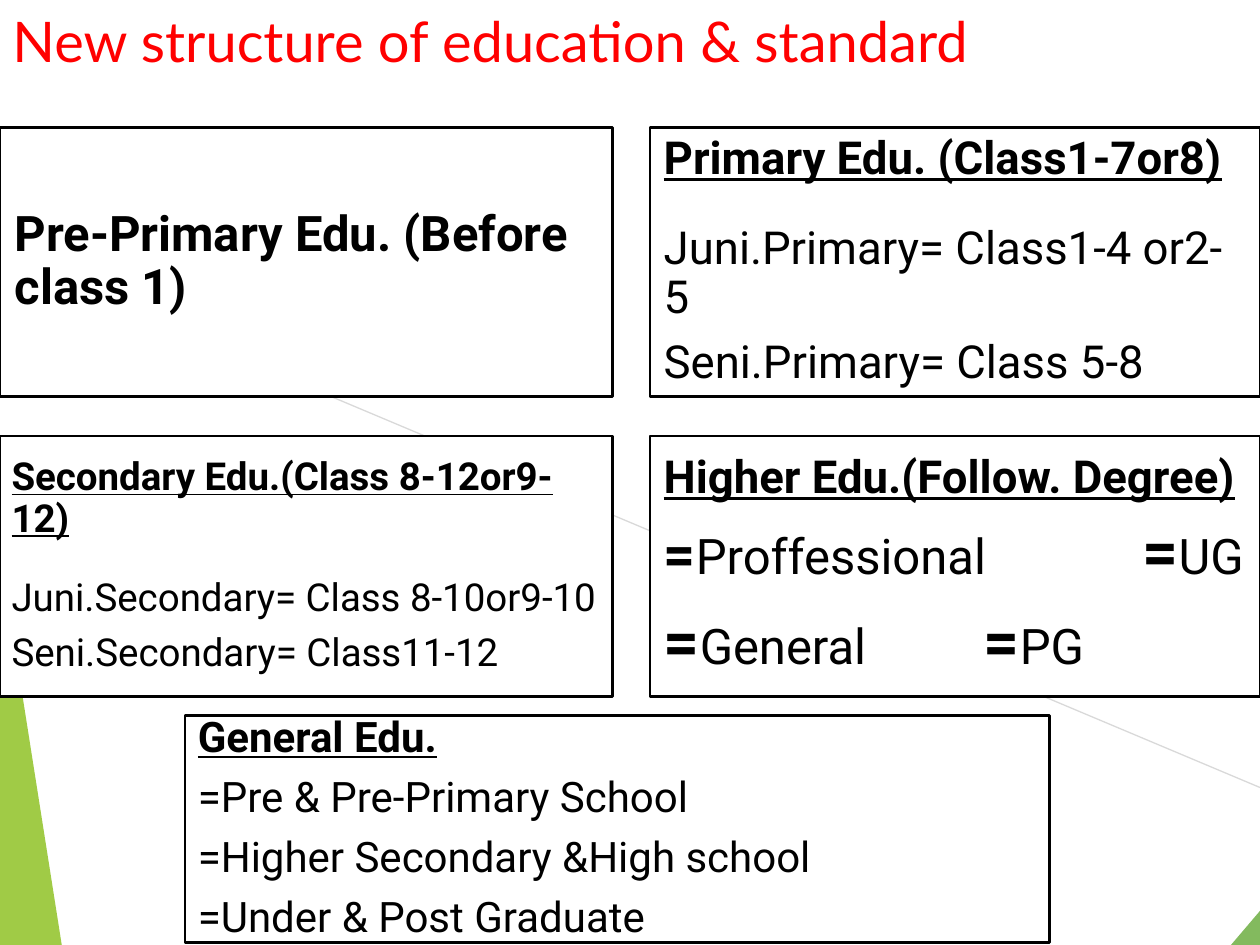
from dataclasses import dataclass

from lxml import etree
from pptx import Presentation
from pptx import util as u
from pptx.dml.color import RGBColor
from pptx.enum import shapes, text
from pptx.oxml import ns


@dataclass(frozen=True)
class Theme:
    title_font: str = "Lato"
    body_font: str = "Roboto"
    title_color: str = "FF0000"
    ink: str = "000000"
    paper: str = "FFFFFF"
    hairline: str = "D9D9D9"
    green: str = "54A021"
    lime: str = "90C226"
    title_size: int = 32
    small: int = 22
    normal: int = 24
    large: int = 26
    huge: int = 28
    first_sign: int = 32
    sign: int = 36
    line_spacing: float = 0.9
    space_after: float = 0.35


class SlideBuilder:
    """Places elements on a grid of 100 columns by 75 rows."""

    COLUMNS, ROWS = 100, 75

    def __init__(self, presentation, theme):
        self.theme = theme
        self.column = presentation.slide_width / self.COLUMNS
        self.row = presentation.slide_height / self.ROWS
        self.slide = presentation.slides.add_slide(presentation.slide_layouts[6])

    def area(self, left, top, width, height):
        return (u.Emu(round(left * self.column)), u.Emu(round(top * self.row)),
                u.Emu(round(width * self.column)), u.Emu(round(height * self.row)))

    def style(self, run, font, size, color, bold=False, underline=False):
        run.font.name = font
        run.font.size = u.Pt(size)
        run.font.color.rgb = RGBColor.from_string(color)
        run.font.bold = bold
        run.font.underline = underline

    def title(self, wording, *place):
        box = self.slide.shapes.add_textbox(*self.area(*place))
        box.text_frame.word_wrap = True
        box.text_frame.text = wording
        self.style(box.text_frame.paragraphs[0].runs[0], self.theme.title_font,
                   self.theme.title_size, self.theme.title_color)

    def triangle(self, place, apex, color, opacity):
        shape = self.slide.shapes.add_shape(
            shapes.MSO_SHAPE.ISOSCELES_TRIANGLE, *self.area(*place))
        shape.shadow.inherit = False
        shape.adjustments[0] = apex
        shape.fill.solid()
        shape.fill.fore_color.rgb = RGBColor.from_string(color)
        shape.line.fill.background()
        color_node = next(shape.element.spPr.iter(ns.qn("a:srgbClr")))
        etree.SubElement(color_node, ns.qn("a:alpha"), val=str(opacity * 1000))

    def line(self, start, end):
        connector = self.slide.shapes.add_connector(
            shapes.MSO_CONNECTOR.STRAIGHT, *self.area(*start, *end))
        connector.line.color.rgb = RGBColor.from_string(self.theme.hairline)
        connector.line.width = u.Pt(0.75)
        etree.SubElement(connector.element.spPr, ns.qn("a:effectLst"))

    def card(self, place, size):
        """Adds an outlined box and returns its text frame."""
        shape = self.slide.shapes.add_shape(
            shapes.MSO_SHAPE.RECTANGLE, *self.area(*place))
        shape.shadow.inherit = False
        shape.fill.solid()
        shape.fill.fore_color.rgb = RGBColor.from_string(self.theme.paper)
        shape.line.color.rgb = RGBColor.from_string(self.theme.ink)
        shape.line.width = u.Pt(1.5)
        frame = shape.text_frame
        frame.word_wrap = True
        frame.vertical_anchor = text.MSO_ANCHOR.MIDDLE
        inset = u.Pt(size * 0.3)
        frame.margin_left = frame.margin_right = inset
        frame.margin_top = frame.margin_bottom = inset
        return frame

    def paragraph(self, frame, size):
        first = frame.paragraphs[0]
        paragraph = frame.add_paragraph() if first.runs else first
        paragraph.alignment = text.PP_ALIGN.LEFT
        paragraph.line_spacing = self.theme.line_spacing
        paragraph.space_after = u.Pt(round(size * self.theme.space_after, 1))
        return paragraph

    def heading(self, frame, wording, size, underline=True):
        paragraph = self.paragraph(frame, size)
        paragraph.text = wording
        self.style(paragraph.runs[0], self.theme.body_font, size,
                   self.theme.ink, True, underline)

    def lines(self, frame, wordings, size, gap):
        for index, wording in enumerate(wordings):
            paragraph = self.paragraph(frame, size)
            paragraph.text = wording
            if index == 0 and gap:
                paragraph.space_before = u.Pt(gap)
            self.style(paragraph.runs[0], self.theme.body_font, size, self.theme.ink)

    def pair(self, frame, left, right, tab, left_sign):
        """Adds two items on one line, each after a bold equals sign."""
        theme = self.theme
        paragraph = self.paragraph(frame, theme.sign)
        properties = paragraph._p.get_or_add_pPr()
        tabs = etree.SubElement(properties, ns.qn("a:tabLst"))
        etree.SubElement(tabs, ns.qn("a:tab"), pos=str(u.Inches(tab)), algn="l")
        for wording, size, bold in (("=", left_sign, True), (left + "\t", theme.huge, False),
                                    ("=", theme.sign, True), (right, theme.huge, False)):
            run = paragraph.add_run()
            run.text = wording
            self.style(run, theme.body_font, size, theme.ink, bold)


def main():
    presentation = Presentation()
    presentation.slide_width, presentation.slide_height = u.Inches(10), u.Inches(7.5)
    theme = Theme()
    builder = SlideBuilder(presentation, theme)

    # Corner decoration
    builder.line((100, 62.5), (-18.8, 12.5))
    builder.triangle((97.7, 72.3, 2.3, 2.7), 1, theme.green, 72)
    builder.triangle((0, 43.9, 4.9, 31.1), 0, theme.lime, 85)

    # Two by two grid of levels
    left, right = (0, 48.6), (51.6, 48.4)
    upper, lower = (10.1, 21.4), (34.6, 20.7)

    def cell(column, row):
        return column[0], row[0], column[1], row[1]

    frame = builder.card(cell(left, upper), theme.huge)
    builder.heading(frame, "Pre-Primary Edu. (Before class 1)", theme.huge, underline=False)

    general = (14.7, 56.8, 68.6, 18)
    for place, size, gap, heading, lines in (
        (cell(right, upper), theme.large, 14, "Primary Edu. (Class1-7or8)",
         ("Juni.Primary= Class1-4 or2-5", "Seni.Primary= Class 5-8")),
        (cell(left, lower), theme.small, 14, "Secondary Edu.(Class 8-12or9-12)",
         ("Juni.Secondary= Class 8-10or9-10", "Seni.Secondary= Class11-12")),
        (general, theme.normal, 0, "General Edu.",
         ("=Pre & Pre-Primary School", "=Higher Secondary &High school",
          "=Under & Post Graduate")),
    ):
        frame = builder.card(place, size)
        builder.heading(frame, heading, size)
        builder.lines(frame, lines, size, gap)

    frame = builder.card(cell(right, lower), theme.large)
    builder.heading(frame, "Higher Edu.(Follow. Degree)", theme.large)
    builder.pair(frame, "Proffessional", "UG", 3.8, theme.first_sign)
    builder.pair(frame, "General", "PG", 2.54, theme.sign)

    # Title
    builder.title("New structure of education & standard", 0, 0, 100, 9.2)

    presentation.save("out.pptx")


if __name__ == "__main__":
    main()
